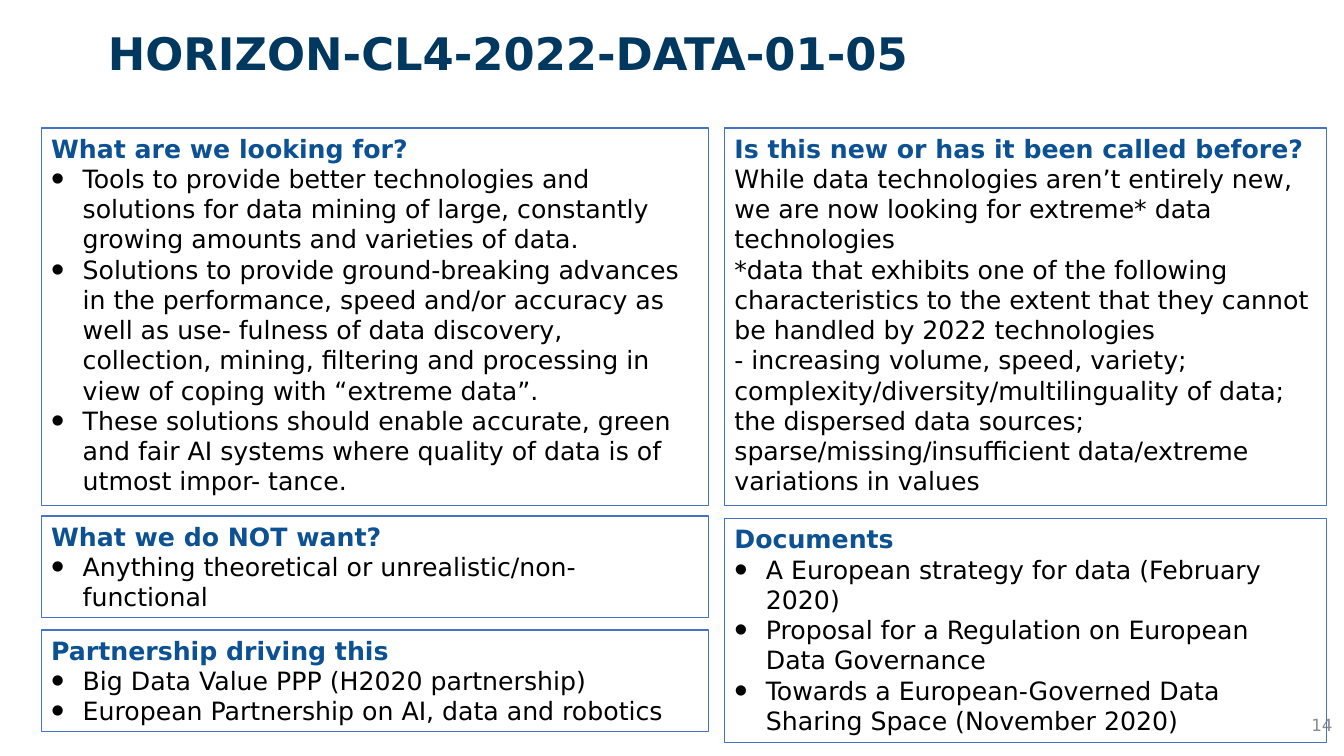
from lxml import etree
from pptx import Presentation
from pptx.dml.color import RGBColor
from pptx.enum.shapes import MSO_SHAPE
from pptx.enum.text import MSO_ANCHOR, MSO_AUTO_SIZE, PP_ALIGN
from pptx.oxml.ns import qn
from pptx.util import Pt

RECT = MSO_SHAPE.RECTANGLE
TOP, MIDDLE = MSO_ANCHOR.TOP, MSO_ANCHOR.MIDDLE
LEFT, RIGHT = PP_ALIGN.LEFT, PP_ALIGN.RIGHT
GROW = MSO_AUTO_SIZE.SHAPE_TO_FIT_TEXT

FONT = "DejaVu Sans"
INDENT = Pt(22.5)
COLORS = {"title": "003860", "heading": "0C5193", "body": "000000",
          "border": "4472C4", "number": "8C8C8C"}

# Columns as (left, width)
LEFT_COL = (29.5, 476.5)
RIGHT_COL = (517.5, 430)

# Panels: column, top, height, border width, bulleted, heading, paragraphs
PANELS = [
    (LEFT_COL, 91.5, 269.5, 1, True, "What are we looking for?", [
        "Tools to provide better technologies and solutions for data mining of "
        "large, constantly growing amounts and varieties of data.",
        "Solutions to provide ground-breaking advances in the performance, speed "
        "and/or accuracy as well as use- fulness of data discovery, collection, "
        "mining, filtering and processing in view of coping with “extreme data”.",
        "These solutions should enable accurate, green and fair AI systems where "
        "quality of data is of utmost impor- tance."]),
    (LEFT_COL, 368.5, 72.7, 1, True, "What we do NOT want?", [
        "Anything theoretical or unrealistic/non-functional"]),
    (LEFT_COL, 450, 72.7, 0.75, True, "Partnership driving this", [
        "Big Data Value PPP (H2020 partnership)",
        "European Partnership on AI, data and robotics"]),
    (RIGHT_COL, 91.5, 269.5, 1, False, "Is this new or has it been called before?", [
        "While data technologies aren’t entirely new, we are now looking for "
        "extreme* data technologies",
        "*data that exhibits one of the following characteristics to the extent "
        "that they cannot be handled by 2022 technologies",
        "- increasing volume, speed, variety; complexity/diversity/multilinguality "
        "of data; the dispersed data sources; sparse/missing/insufficient "
        "data/extreme variations in values"]),
    (RIGHT_COL, 370.5, 160, 1, True, "Documents", [
        "A European strategy for data (February 2020)",
        "Proposal for a Regulation on European Data Governance",
        "Towards a European-Governed Data Sharing Space (November 2020)"]),
]


def rgb(name):
    return RGBColor.from_string(COLORS[name])


def add_bullet(p):
    pPr = p._p.get_or_add_pPr()
    pPr.set("marL", str(INDENT))
    pPr.set("indent", str(-INDENT))
    for tag, name, value in (("a:buSzPct", "val", "150000"),
                             ("a:buFont", "typeface", "Arial"),
                             ("a:buChar", "char", "•")):
        etree.SubElement(pPr, qn(tag)).set(name, value)


def write(p, text, size=18, color="body", bold=False, align=LEFT, bullet=False):
    p.alignment = align
    if bullet:
        add_bullet(p)
    r = p.add_run()
    r.text = text
    r.font.name = FONT
    r.font.size = Pt(size)
    r.font.bold = bold
    r.font.color.rgb = rgb(color)


def add_title(slide, x, y, w, h):
    tf = slide.shapes.add_textbox(Pt(x), Pt(y), Pt(w), Pt(h)).text_frame
    tf.word_wrap = False
    tf.auto_size = GROW
    write(tf.paragraphs[0], "HORIZON-CL4-2022-DATA-01-05", size=32,
          color="title", bold=True)


def add_page_number(slide, x, y, w, h):
    tf = slide.shapes.add_textbox(Pt(x), Pt(y), Pt(w), Pt(h)).text_frame
    tf.word_wrap = True
    tf.vertical_anchor = MIDDLE
    write(tf.paragraphs[0], "14", size=12, color="number", align=RIGHT)


def add_panel(slide, x, y, w, h, border, bulleted, heading, paragraphs):
    sp = slide.shapes.add_shape(RECT, Pt(x), Pt(y), Pt(w), Pt(h))
    sp.shadow.inherit = False
    sp.fill.background()
    sp.line.color.rgb = rgb("border")
    sp.line.width = Pt(border)
    tf = sp.text_frame
    tf.word_wrap = True
    tf.auto_size = GROW
    tf.vertical_anchor = TOP
    write(tf.paragraphs[0], heading, color="heading", bold=True)
    for text in paragraphs:
        write(tf.add_paragraph(), text, bullet=bulleted)


def main():
    prs = Presentation()
    prs.slide_width, prs.slide_height = Pt(960), Pt(540)
    slide = prs.slides.add_slide(prs.slide_layouts[6])
    add_page_number(slide, 743, 503.5, 216, 28.75)
    add_title(slide, 70, 14.5, 623, 46)
    for (x, w), y, h, *content in PANELS:
        add_panel(slide, x, y, w, h, *content)
    prs.save("out.pptx")


if __name__ == "__main__":
    main()
